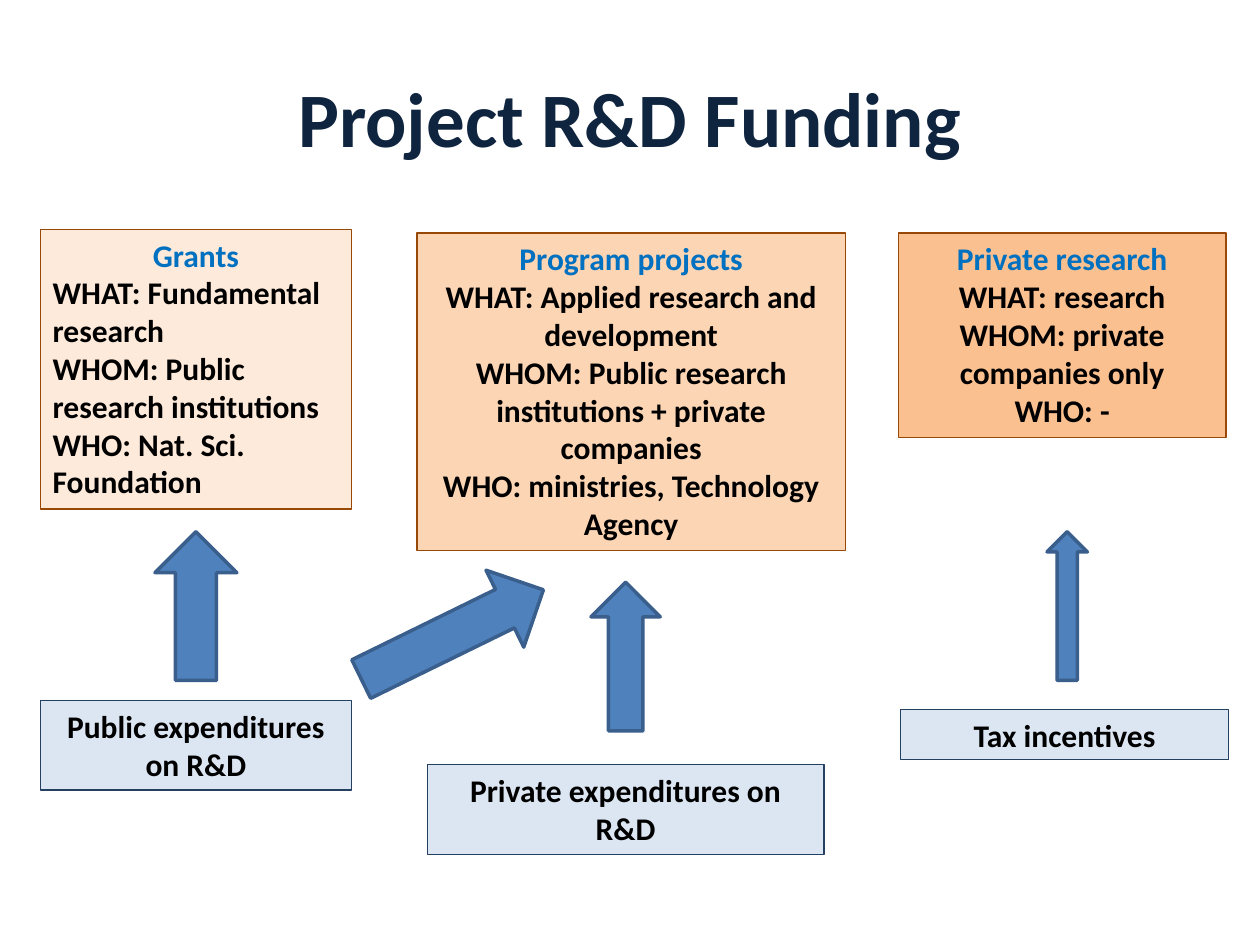
from dataclasses import dataclass

from pptx import Presentation
from pptx.dml.color import RGBColor
from pptx.enum.shapes import MSO_SHAPE
from pptx.enum.text import MSO_ANCHOR, MSO_AUTO_SIZE, PP_ALIGN
from pptx.util import Inches, Pt

RECT, ARROW = MSO_SHAPE.RECTANGLE, MSO_SHAPE.DOWN_ARROW
LEFT, CENTER = PP_ALIGN.LEFT, PP_ALIGN.CENTER
MIDDLE, TOP = MSO_ANCHOR.MIDDLE, MSO_ANCHOR.TOP
GROW = MSO_AUTO_SIZE.SHAPE_TO_FIT_TEXT


@dataclass(frozen=True)
class Theme:
    """Colours, font and type sizes of the slide."""
    font: str = "Calibri"
    big: int = 44
    body: int = 18
    title: str = "0F243E"
    head: str = "0070C0"
    text: str = "000000"
    warm: str = "984807"
    cool: str = "254061"
    pale: str = "DCE6F2"
    arrow: str = "4F81BD"
    edge: str = "3A5F8C"


THEME = Theme()


def rgb(code):
    """Turn a hex code into a colour."""
    return RGBColor.from_string(code)


def apply(item, values):
    """Set each attribute in a dict of format values."""
    for name, value in values.items():
        setattr(item, name, value)


def write(para, text, size, color, align=CENTER):
    """Fill a paragraph with one bold run."""
    para.alignment = align
    run = para.add_run()
    run.text = text
    apply(run.font, {"name": THEME.font, "size": Pt(size), "bold": True})
    run.font.color.rgb = rgb(color)


def draw(slide, kind, box, fill, line, width):
    """Add a flat shape in the given box."""
    shape = slide.shapes.add_shape(kind, *map(Inches, box))
    shape.shadow.inherit = False
    shape.fill.solid()
    shape.fill.fore_color.rgb = rgb(fill)
    shape.line.color.rgb = rgb(line)
    shape.line.width = Pt(width)
    return shape


def add_title(slide, box, text):
    """Place the slide title in its placeholder."""
    title = slide.shapes.title
    apply(title, dict(zip(("left", "top", "width", "height"), map(Inches, box))))
    frame = title.text_frame
    apply(frame, {"vertical_anchor": MIDDLE, "word_wrap": True})
    write(frame.paragraphs[0], text, THEME.big, THEME.title)


def add_panel(slide, box, fill, line, rows):
    """Place a text panel; rows hold text, colour and alignment."""
    shape = draw(slide, RECT, box, fill, line, 0.75)
    frame = shape.text_frame
    apply(frame, {"word_wrap": True, "vertical_anchor": TOP, "auto_size": GROW})
    for i, (text, color, align) in enumerate(rows):
        para = frame.add_paragraph() if i else frame.paragraphs[0]
        write(para, text, THEME.body, color, align)


def add_fund(slide, box, fill, align, head, *lines):
    """Place a funding type with its heading and details."""
    rows = [(head, THEME.head, CENTER)]
    rows += [(line, THEME.text, align) for line in lines]
    add_panel(slide, box, fill, THEME.warm, rows)


def add_source(slide, box, text):
    """Place a source of money."""
    add_panel(slide, box, THEME.pale, THEME.cool, [(text, THEME.text, CENTER)])


def add_arrow(slide, box, turn=180):
    """Place a block arrow turned towards its funding type."""
    shape = draw(slide, ARROW, box, THEME.arrow, THEME.edge, 2)
    shape.rotation = turn


FUNDS = [
    ((3.31, 1.85, 3.4, 2.52), "FCD5B5", CENTER, "Program projects",
     "WHAT: Applied research and development",
     "WHOM: Public research institutions + private companies",
     "WHO: ministries, Technology Agency"),
    ((0.32, 1.82, 2.47, 2.22), "FDEADA", LEFT, "Grants",
     "WHAT: Fundamental research",
     "WHOM: Public research institutions",
     "WHO: Nat. Sci. Foundation"),
    ((7.13, 1.85, 2.6, 1.62), "FAC090", CENTER, "Private research",
     "WHAT: research", "WHOM: private companies only", "WHO: -"),
]
SOURCES = [
    ((0.32, 5.56, 2.47, 0.71), "Public expenditures on R&D"),
    ((7.15, 5.63, 2.6, 0.4), "Tax incentives"),
    ((3.39, 6.07, 3.15, 0.71), "Private expenditures on R&D"),
]
ARROWS = [
    ((1.23, 4.22, 0.65, 1.18),),
    ((4.69, 4.62, 0.55, 1.18),),
    ((8.31, 4.22, 0.32, 1.18),),
    ((3.25, 4.23, 0.68, 1.61), 243.9),
]


def main():
    """Build and save the slide."""
    deck = Presentation()
    apply(deck, {"slide_width": Inches(10), "slide_height": Inches(7.5)})
    slide = deck.slides.add_slide(deck.slide_layouts.get_by_name("Title Only"))
    add_title(slide, (0.5, 0.3, 9, 1.25), "Project R&D Funding")
    for place, items in ((add_fund, FUNDS), (add_source, SOURCES), (add_arrow, ARROWS)):
        for item in items:
            place(slide, *item)
    deck.save("out.pptx")


if __name__ == "__main__":
    main()
